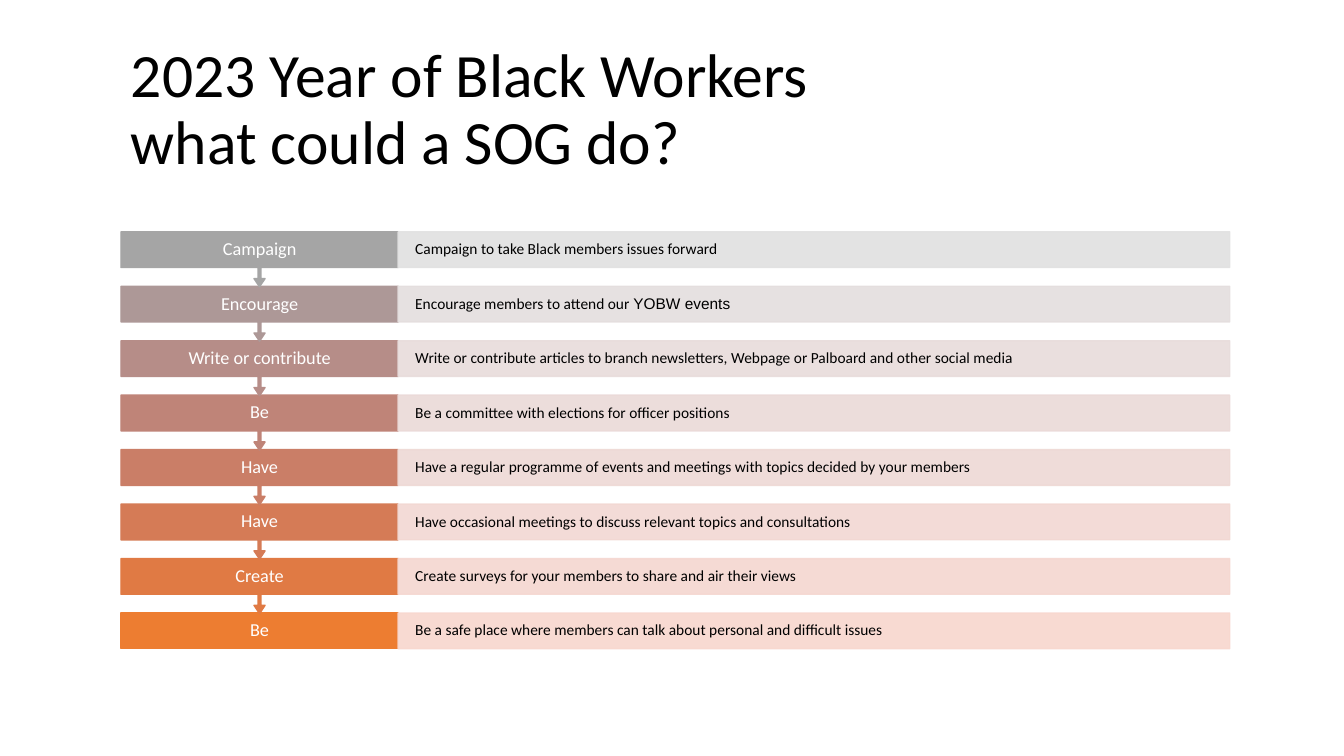
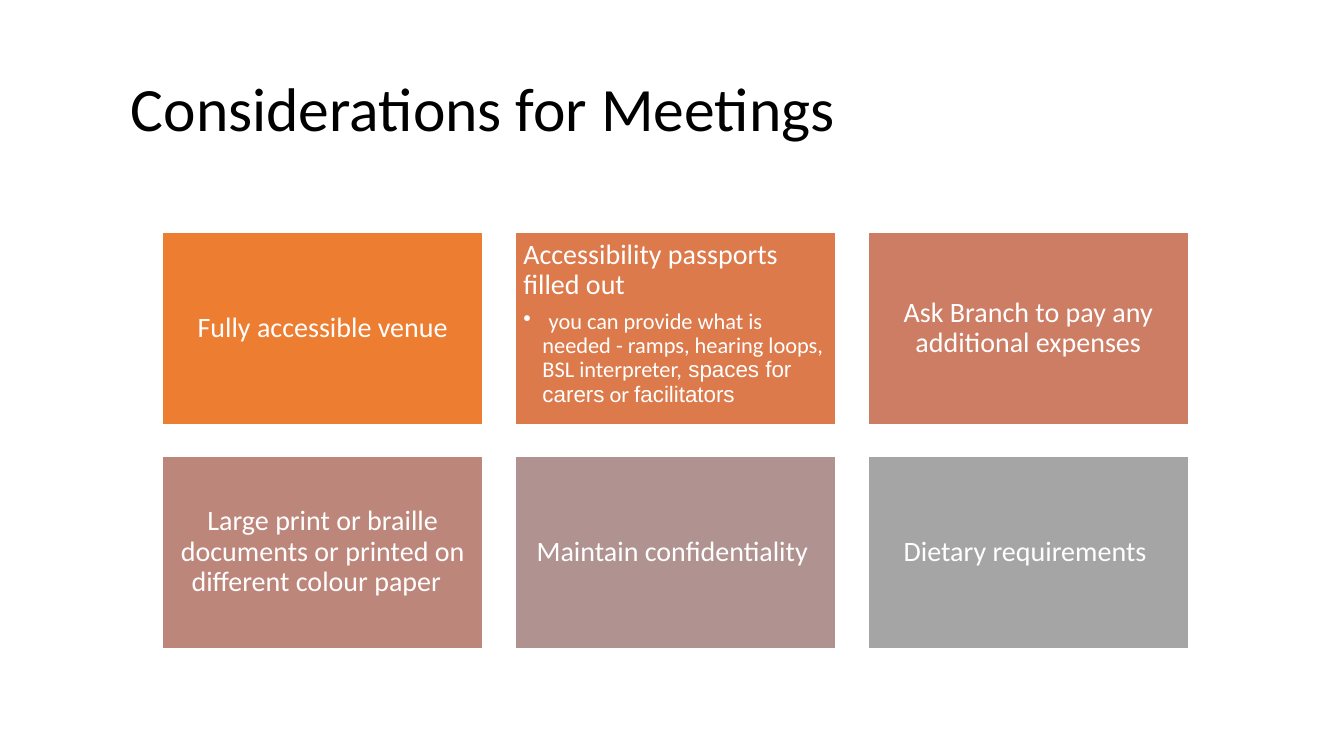
from lxml import etree
from pptx import Presentation
from pptx.dml.color import RGBColor
from pptx.enum import shapes, text
from pptx.oxml import ns
from pptx.util import Pt

BODY, ALT = "Calibri", "Arial"
BLACK, WHITE = "000000", "FFFFFF"

STEPS_TITLE = ["2023 Year of Black Workers ", "what could a SOG do? "]
STEPS = [
    ("Campaign", "A5A5A5", "E1E1E1",
     [("Campaign to take Black members issues forward", BODY)]),
    ("Encourage", "AD9897", "E4DEDE",
     [("Encourage members to attend our ", BODY), ("YOBW events ", ALT)]),
    ("Write or contribute", "B68D88", "E8DCDB",
     [("Write or contribute articles to branch newsletters, Webpage or Palboard and other social media ", BODY)]),
    ("Be", "BF8478", "EBDAD8",
     [("Be a committee with elections for officer positions", BODY)]),
    ("Have", "CA7E67", "EED9D5",
     [("Have a regular programme of events and meetings with topics decided by your members ", BODY)]),
    ("Have", "D57B56", "F2D8D3",
     [("Have occasional meetings to discuss relevant topics and consultations ", BODY)]),
    ("Create", "E07A44", "F5D7D0",
     [("Create surveys for your members to share and air their views ", BODY)]),
    ("Be", "ED7D31", "F8D7CE",
     [("Be a safe place where members can talk about personal and difficult issues", BODY)]),
]

MEETINGS_TITLE = ["Considerations for Meetings"]
CONSIDERATIONS = [
    ("Fully accessible venue", "ED7D31", []),
    ("Accessibility passports filled out ", "DC7A4B", [
        (" ", ALT),
        ("you can provide what is needed - ramps, hearing loops, BSL interpreter,", BODY),
        (" spaces for carers", ALT),
        (" or ", BODY),
        ("facilitators ", ALT),
    ]),
    ("Ask Branch to pay any additional expenses", "CC7D64", []),
    ("Large print or braille documents or printed on different colour paper  ", "BD867B", []),
    ("Maintain confidentiality ", "B09391", []),
    ("Dietary requirements ", "A5A5A5", []),
]

LEFT, TOP = 86.4, 165.6
TITLE_TOP, TITLE_WIDTH, TITLE_HEIGHT = 22.5, 792, 114
STEP_WIDTH, STEP_HEIGHT, STEP_PITCH = 198, 25.5, 38.9
CALLOUT_HEIGHT = 39.3
CALLOUT_SHAPE = [0.05, 0.1, 0.15, 0.65]
CARD_LEFT, CARD_WIDTH, CARD_HEIGHT = 116, 229, 137.5
CARD_GAP_X, CARD_GAP_Y, COLUMNS = 23, 22.5, 3
BULLET_INDENT = 13.7


def rgb(value):
    return RGBColor.from_string(value)


def add_block(slide, kind, box, fill, line, inset_x, inset_y=0):
    block = slide.shapes.add_shape(kind, *map(Pt, box))
    block.shadow.inherit = False
    block.fill.solid()
    block.fill.fore_color.rgb = rgb(fill)
    block.line.color.rgb = rgb(line)
    block.line.width = Pt(1)
    frame = block.text_frame
    frame.word_wrap = True
    frame.vertical_anchor = text.MSO_ANCHOR.MIDDLE
    frame.margin_left = frame.margin_right = Pt(inset_x)
    frame.margin_top = frame.margin_bottom = Pt(inset_y)
    return block


def make_translucent(block, percent):
    for color in block.element.spPr.iter(ns.qn("a:srgbClr")):
        etree.SubElement(color, ns.qn("a:alpha")).set("val", str(percent * 1000))


def add_bullet(paragraph):
    props = paragraph._p.get_or_add_pPr()
    props.set("marL", str(Pt(BULLET_INDENT)))
    props.set("indent", str(-Pt(BULLET_INDENT)))
    etree.SubElement(props, ns.qn("a:buChar")).set("char", "•")


def write(paragraph, runs, size, color, align=text.PP_ALIGN.LEFT):
    paragraph.alignment = align
    paragraph.line_spacing = 0.9
    for words, font_name in runs:
        run = paragraph.add_run()
        run.text = words
        run.font.name = font_name
        run.font.size = Pt(size)
        run.font.color.rgb = rgb(color)


def add_titled_slide(deck, title_lines):
    slide = deck.slides.add_slide(deck.slide_layouts[6])
    title = slide.shapes.add_textbox(Pt(LEFT), Pt(TITLE_TOP), Pt(TITLE_WIDTH), Pt(TITLE_HEIGHT))
    frame = title.text_frame
    frame.word_wrap = True
    frame.vertical_anchor = text.MSO_ANCHOR.MIDDLE
    paragraph = frame.paragraphs[0]
    for index, words in enumerate(title_lines):
        if index:
            paragraph.add_line_break()
        write(paragraph, [(words, BODY)], 44, BLACK)
    return slide


def add_step(slide, index, step):
    action, strong, pale, detail_runs = step
    top = TOP + index * STEP_PITCH
    is_last = index == len(STEPS) - 1
    kind = shapes.MSO_SHAPE.RECTANGLE if is_last else shapes.MSO_SHAPE.DOWN_ARROW_CALLOUT
    height = STEP_HEIGHT if is_last else CALLOUT_HEIGHT
    label = add_block(slide, kind, (LEFT, top, STEP_WIDTH, height), strong, strong, 14)
    if not is_last:
        for position, value in enumerate(CALLOUT_SHAPE):
            label.adjustments[position] = value
    write(label.text_frame.paragraphs[0], [(action, BODY)], 13, WHITE, text.PP_ALIGN.CENTER)

    detail_box = (LEFT + STEP_WIDTH, top, TITLE_WIDTH - STEP_WIDTH, STEP_HEIGHT)
    detail = add_block(slide, shapes.MSO_SHAPE.RECTANGLE, detail_box, pale, pale, 12.2)
    make_translucent(detail, 90)
    write(detail.text_frame.paragraphs[0], detail_runs, 11, BLACK)


def add_card(slide, index, consideration):
    heading, fill, note_runs = consideration
    row, column = divmod(index, COLUMNS)
    box = (CARD_LEFT + column * (CARD_WIDTH + CARD_GAP_X),
           TOP + row * (CARD_HEIGHT + CARD_GAP_Y), CARD_WIDTH, CARD_HEIGHT)
    card = add_block(slide, shapes.MSO_SHAPE.RECTANGLE, box, fill, WHITE, 5.8, 5.8)
    frame = card.text_frame
    align = text.PP_ALIGN.LEFT if note_runs else text.PP_ALIGN.CENTER
    write(frame.paragraphs[0], [(heading, BODY)], 20, WHITE, align)
    if note_runs:
        frame.vertical_anchor = text.MSO_ANCHOR.TOP
        frame.paragraphs[0].space_after = Pt(7)
        note = frame.add_paragraph()
        add_bullet(note)
        write(note, note_runs, 16, WHITE)


def main():
    deck = Presentation()
    deck.slide_width, deck.slide_height = Pt(960), Pt(540)

    steps_slide = add_titled_slide(deck, STEPS_TITLE)
    for index, step in reversed(list(enumerate(STEPS))):
        add_step(steps_slide, index, step)

    meetings_slide = add_titled_slide(deck, MEETINGS_TITLE)
    for index, consideration in enumerate(CONSIDERATIONS):
        add_card(meetings_slide, index, consideration)

    deck.save("out.pptx")


if __name__ == "__main__":
    main()
